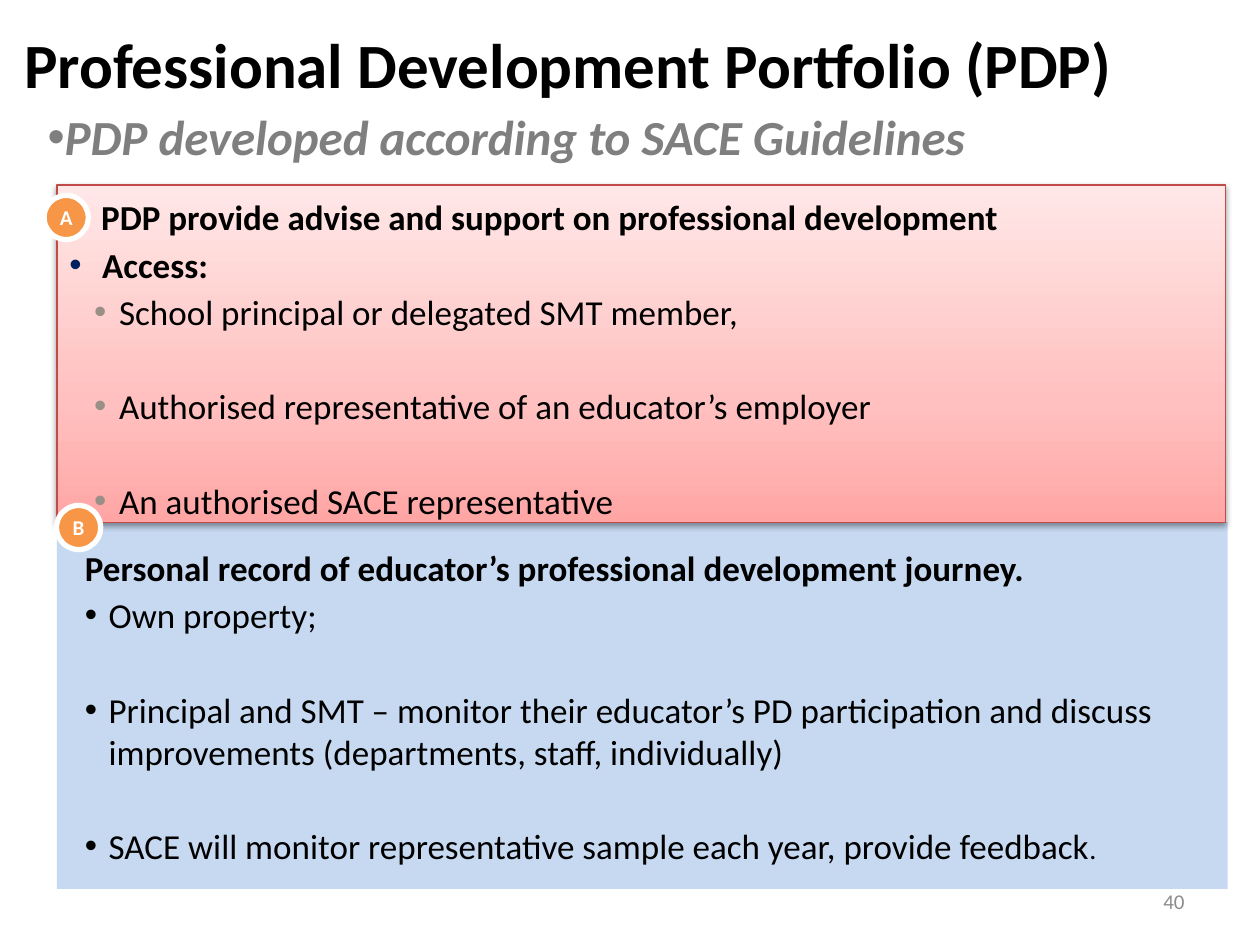
from copy import deepcopy

from lxml import etree
from pptx import Presentation
from pptx.dml.color import RGBColor
from pptx.enum.shapes import MSO_SHAPE
from pptx.enum.text import MSO_ANCHOR, PP_ALIGN
from pptx.oxml.ns import qn
from pptx.util import Cm, Pt

RECTANGLE, OVAL = MSO_SHAPE.RECTANGLE, MSO_SHAPE.OVAL
TOP, MIDDLE = MSO_ANCHOR.TOP, MSO_ANCHOR.MIDDLE
LEFT, CENTER, RIGHT = PP_ALIGN.LEFT, PP_ALIGN.CENTER, PP_ALIGN.RIGHT


def rgb(value):
    return RGBColor.from_string(value)


def write(frame, runs, color="000000", bold=False, italic=False, align=LEFT,
          before=0, margin=0, hanging=0, bullet=None):
    paragraph = frame.paragraphs[0]
    if paragraph.runs:
        paragraph = frame.add_paragraph()
    paragraph.alignment = align
    paragraph.space_before = Pt(before)
    properties = paragraph._p.get_or_add_pPr()
    properties.set("marL", str(Cm(margin)))
    properties.set("indent", str(-Cm(hanging)))
    if bullet:
        bullet_color = etree.SubElement(properties, qn("a:buClr"))
        etree.SubElement(bullet_color, qn("a:srgbClr"), val=bullet)
        etree.SubElement(properties, qn("a:buFont"), typeface="Arial")
        etree.SubElement(properties, qn("a:buChar"), char="•")
    for text, size in runs:
        run = paragraph.add_run()
        run.text = text
        run.font.name = "Calibri"
        run.font.size = Pt(size)
        run.font.bold = bold
        run.font.italic = italic
        run.font.color.rgb = rgb(color)


presentation = Presentation()
presentation.slide_width = Cm(25.4)
presentation.slide_height = Cm(19.05)
slide = presentation.slides.add_slide(presentation.slide_layouts[6])

headings = [
    (0, 0.38, 22.91, 1.8, "Professional Development Portfolio (PDP)", 36,
     dict(bold=True, align=CENTER)),
    (0.71, 2.34, 23.88, 0.81, "PDP developed according to SACE Guidelines", 28,
     dict(color="7F7F7F", bold=True, italic=True, bullet="7F7F7F")),
    (18.21, 17.65, 5.92, 1.02, "40", 12, dict(color="8C8C8C", align=RIGHT)),
]
for left, top, width, height, text, size, style in headings:
    frame = slide.shapes.add_textbox(Cm(left), Cm(top), Cm(width), Cm(height)).text_frame
    frame.word_wrap = True
    frame.vertical_anchor = MIDDLE
    write(frame, [(text, size)], **style)

record = slide.shapes.add_shape(RECTANGLE, Cm(1.15), Cm(10.52), Cm(23.6), Cm(7.4))
record.shadow.inherit = False
record.fill.solid()
record.fill.fore_color.rgb = rgb("C6D9F1")
record.line.fill.background()

access = slide.shapes.add_shape(RECTANGLE, Cm(1.15), Cm(3.73), Cm(23.55), Cm(6.8))
access.shadow.inherit = False
access.fill.gradient()
access.fill.gradient_angle = 90
stop_list = access._element.spPr.find(".//" + qn("a:gsLst"))
stop_list.append(deepcopy(stop_list[-1]))
for stop, position, color in zip(access.fill.gradient_stops, (0, 0.35, 1),
                                 ("FFA6A5", "FFC0BF", "FFE7E7")):
    stop.position = position
    stop.color.rgb = rgb(color)
access.line.color.rgb = rgb("BF4C48")
access.line.width = Pt(0.75)
shadow = etree.SubElement(access._element.spPr.find(qn("a:effectLst")), qn("a:outerShdw"),
                          blurRad=str(Pt(3.1)), dist=str(Pt(1.6)), dir="5400000", rotWithShape="0")
shadow_color = etree.SubElement(shadow, qn("a:srgbClr"), val="000000")
etree.SubElement(shadow_color, qn("a:alpha"), val="38000")

for panel, inset_left, inset_top in ((record, 0.56, 0.5), (access, 0.25, 0.22)):
    frame = panel.text_frame
    frame.word_wrap = True
    frame.vertical_anchor = TOP
    frame.margin_left, frame.margin_top = Cm(inset_left), Cm(inset_top)
    frame.margin_right, frame.margin_bottom = Cm(0.4), Cm(0)

write(record.text_frame,
      [("Personal record of educator’s professional development journey.", 20)], bold=True)
record_points = [
    [("Own property;", 20)],
    [("Principal and SMT – monitor their educator’s PD participation and discuss "
      "improvements (departments, staff, individually)", 20)],
    [("SACE will monitor representative sample each year, provide feedback", 20), (".", 16)],
]
for index, runs in enumerate(record_points):
    write(record.text_frame, runs, before=30 if index else 3,
          margin=0.48, hanging=0.48, bullet="000000")

write(access.text_frame, [("PDP provide advise and support on professional development", 20)],
      bold=True, margin=0.64)
write(access.text_frame, [("Access:", 20)], bold=True, before=3,
      margin=0.66, hanging=0.66, bullet="002060")
readers = [
    "School principal or delegated SMT member,",
    "Authorised representative of an educator’s employer",
    "An authorised SACE representative",
]
for index, reader in enumerate(readers):
    write(access.text_frame, [(reader, 20)], before=30 if index else 3,
          margin=1, hanging=0.5, bullet="998F86")

for letter, left, top in (("A", 0.89, 3.94), ("B", 1.14, 10.19)):
    badge = slide.shapes.add_shape(OVAL, Cm(left), Cm(top), Cm(0.89), Cm(0.89))
    badge.shadow.inherit = False
    badge.fill.solid()
    badge.fill.fore_color.rgb = rgb("F79646")
    badge.line.color.rgb = rgb("FFFFFF")
    badge.line.width = Pt(3)
    badge.text_frame.word_wrap = False
    badge.text_frame.vertical_anchor = MIDDLE
    write(badge.text_frame, [(letter, 12)], color="FFFFFF", bold=True, align=CENTER)

presentation.save("out.pptx")
